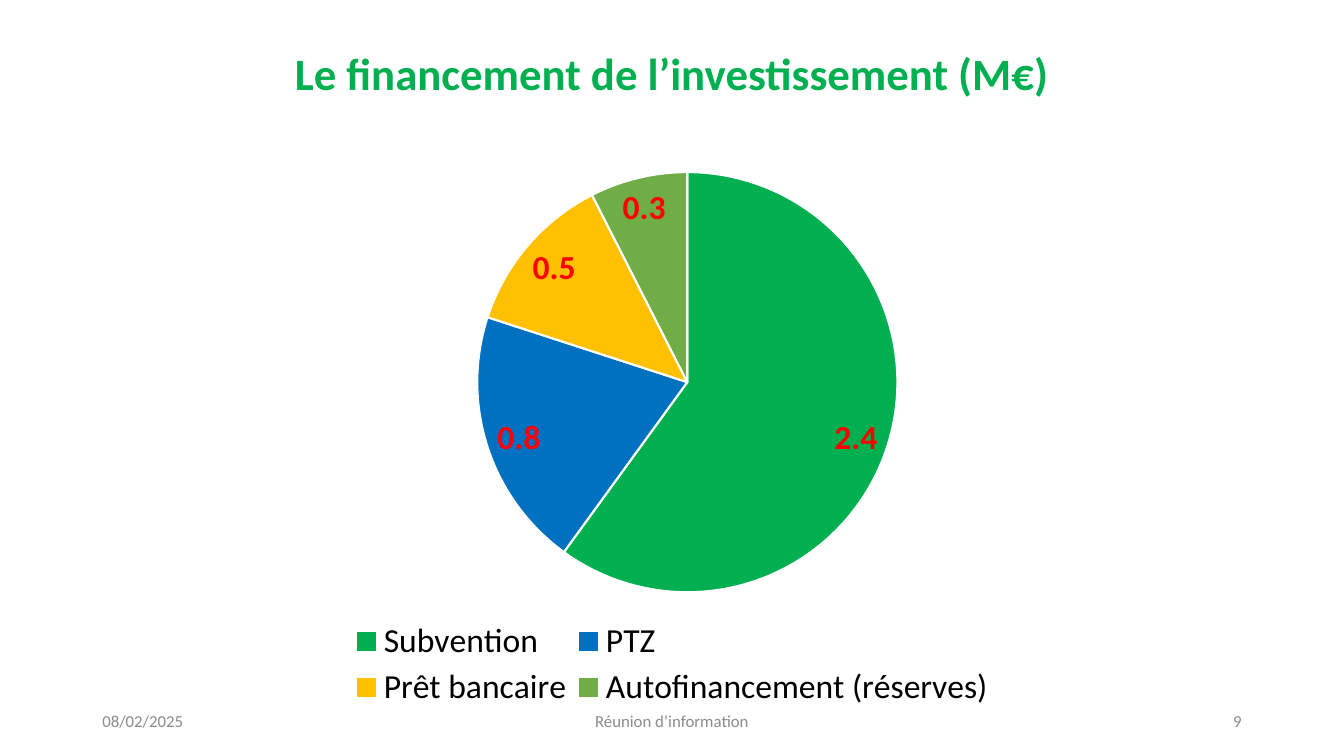
from pptx import Presentation
from pptx.chart.data import CategoryChartData
from pptx.dml.color import RGBColor
from pptx.enum.chart import XL_CHART_TYPE, XL_LABEL_POSITION, XL_LEGEND_POSITION
from pptx.enum.text import MSO_ANCHOR, PP_ALIGN
from pptx.oxml import parse_xml
from pptx.oxml.ns import nsdecls
from pptx.util import Pt

COLORS = {"green": "00B050", "blue": "0070C0", "yellow": "FFC000", "olive": "70AD47",
          "red": "FF0000", "grey": "8B8B8B", "black": "000000", "white": "FFFFFF"}


def set_font(font, size, color, bold=False):
    font.name, font.size, font.bold = "Calibri", Pt(size), bold
    font.color.rgb = RGBColor.from_string(COLORS[color])


def manual_layout(x, y, w, h, target=""):
    """Return a c:layout element; the values are fractions of the chart's size."""
    return parse_xml(
        f'<c:layout {nsdecls("c")}><c:manualLayout>{target}'
        '<c:xMode val="edge"/><c:yMode val="edge"/>'
        f'<c:x val="{x}"/><c:y val="{y}"/><c:w val="{w}"/><c:h val="{h}"/>'
        '</c:manualLayout></c:layout>')


prs = Presentation()
prs.slide_width, prs.slide_height = Pt(960), Pt(540)
s = prs.slides.add_slide(prs.slide_layouts[5])

# Title
title = s.shapes.title
title.left, title.top, title.width, title.height = Pt(66), Pt(28.75), Pt(828), Pt(51)
tf = title.text_frame
tf.text = "Le financement de l’investissement (M€)"
tf.vertical_anchor = MSO_ANCHOR.MIDDLE
p = tf.paragraphs[0]
p.alignment, p.line_spacing = PP_ALIGN.CENTER, 0.9
set_font(p.font, 32, "green", bold=True)

# Pie chart
slices = [("Subvention", 2.4, "green"), ("PTZ", 0.8, "blue"),
          ("Prêt bancaire", 0.5, "yellow"), ("Autofinancement (réserves)", 0.3, "olive")]
data = CategoryChartData(number_format="#,##0.0")
data.categories = [name for name, _, _ in slices]
data.add_series("Financement", [value for _, value, _ in slices])
chart = s.shapes.add_chart(XL_CHART_TYPE.PIE, Pt(114), Pt(80), Pt(732), Pt(429), data).chart
chart.has_title = False
set_font(chart.font, 24, "black")

plot = chart.plots[0]
plot.vary_by_categories = True
for i, (_, _, color) in enumerate(slices):
    fmt = plot.series[0].points[i].format
    fmt.fill.solid()
    fmt.fill.fore_color.rgb = RGBColor.from_string(COLORS[color])
    fmt.line.color.rgb = RGBColor.from_string(COLORS["white"])
    fmt.line.width = Pt(1.5)

plot.has_data_labels = True
labels = plot.data_labels
labels.show_value, labels.show_percentage = True, False
labels.number_format, labels.number_format_is_linked = "#,##0.0", False
labels.position = XL_LABEL_POSITION.BEST_FIT
set_font(labels.font, 24, "red", bold=True)

chart.has_legend = True
legend = chart.legend
legend.position = XL_LEGEND_POSITION.BOTTOM
legend.include_in_layout = False
set_font(legend.font, 24, "black")

plot_area = plot._element.getparent()
for old in plot_area.xpath("c:layout"):
    plot_area.remove(old)
plot_area.insert(0, manual_layout(0.31, 0.1, 0.41, 0.7, '<c:layoutTarget val="inner"/>'))
legend_pos = legend._element.xpath("c:legendPos")[0]
for old in legend._element.xpath("c:layout"):
    legend._element.remove(old)
legend_pos.addnext(manual_layout(0.18, 0.84, 0.64, 0.16))

# Footer
footer = [("08/02/2025", 66, 216, PP_ALIGN.LEFT),
          ("Réunion d’information", 318, 324, PP_ALIGN.CENTER),
          ("9", 678, 216, PP_ALIGN.RIGHT)]
for text, left, width, align in footer:
    tf = s.shapes.add_textbox(Pt(left), Pt(500.5), Pt(width), Pt(28.75)).text_frame
    tf.word_wrap = True
    tf.vertical_anchor = MSO_ANCHOR.MIDDLE
    p = tf.paragraphs[0]
    p.text, p.alignment = text, align
    set_font(p.font, 12, "grey")

prs.save("out.pptx")
